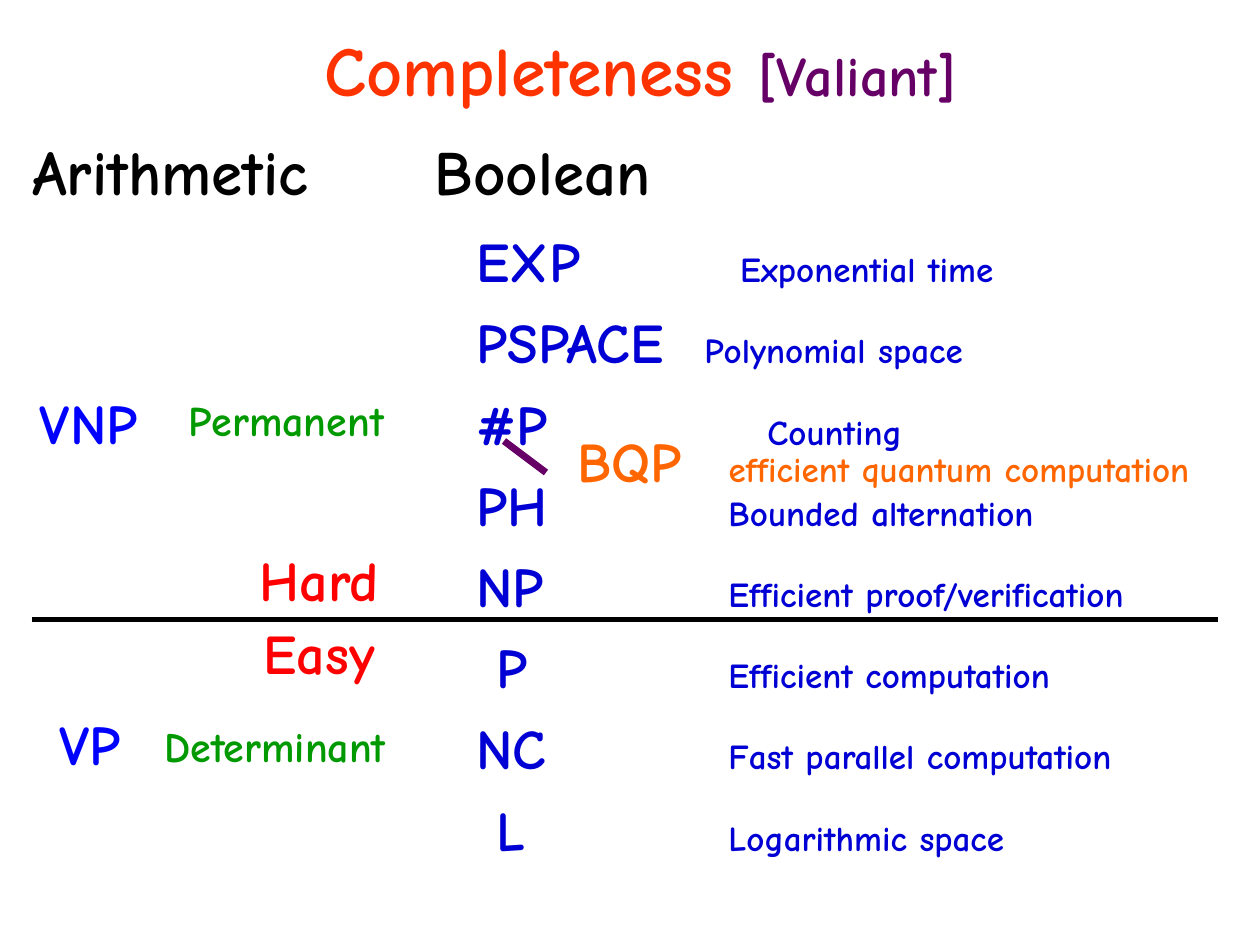
from dataclasses import dataclass

from lxml.etree import SubElement
from pptx import Presentation
from pptx.dml.color import RGBColor
from pptx.enum.shapes import MSO_CONNECTOR as Link
from pptx.enum.text import MSO_ANCHOR as Anchor, PP_ALIGN as Align
from pptx.oxml.ns import qn
from pptx.util import Inches, Pt

COLS, ROWS = 120, 90
PAD = 1.2
NAME, DESC = 45.4, 69.4
BLUE, NAVY, GREEN, RED = "0000FF", "0000D5", "009900", "FF0000"
ORANGE, PLUM, BLACK = "FF6600", "660066", "000000"

deck = Presentation()
deck.slide_width, deck.slide_height = Inches(10), Inches(7.5)
slide = deck.slides.add_slide(deck.slide_layouts[6])


@dataclass
class Label:
    """A centred word on the grid."""
    text: str
    left: float
    top: float
    width: float
    size: int
    color: str


@dataclass
class Level:
    """A complexity class, its meaning, and the column of each."""
    name: str
    note: str
    note_x: float = DESC
    name_x: float = NAME


@dataclass
class Rule:
    """A straight line between two grid points."""
    x1: float
    y1: float
    x2: float
    y2: float
    color: str
    weight: float


LABELS = [
    Label("Permanent", 16, 37, 22.5, 24, GREEN),
    Label("Determinant", 13, 68, 26.4, 24, GREEN),
    Label("Hard", 22.7, 51.4, 15.4, 32, RED),
    Label("Easy", 23.2, 58.3, 14.4, 32, RED),
    Label("Boolean", 39.6, 12, 24.2, 36, BLACK),
    Label("Arithmetic", -0.6, 12, 33.6, 36, BLACK),
    Label("VP", 4.1, 67, 8.9, 32, BLUE),
    Label("VNP", 1.8, 36.4, 13.3, 32, BLUE),
]
LEVELS = [
    Level("EXP", "Exponential time", 70.5),
    Level("PSPACE", "Polynomial space", 67.1),
    Level("#P", "Counting", 73.1),
    Level("PH", "Bounded alternation"),
    Level("NP", "Efficient proof/verification"),
    Level("P", "Efficient computation", name_x=47.3),
    Level("NC", "Fast parallel computation"),
    Level("L", "Logarithmic space", name_x=47.3),
]
QUANTUM = Level("BQP", "efficient quantum computation", name_x=55)
RULES = [
    Rule(3, 59, 116, 59, BLACK, 2.5),
    Rule(48, 42, 52, 45, PLUM, 4),
]


def across(cols: float) -> int:
    """Turn columns into a length."""
    return int(deck.slide_width * cols / COLS)


def down(rows: float) -> int:
    """Turn rows into a length."""
    return int(deck.slide_height * rows / ROWS)


def paint(code: str) -> RGBColor:
    """Turn a hex string into a colour."""
    return RGBColor.from_string(code)


def write(para, text: str, *, size: int, color: str) -> None:
    """Add one run of bold text."""
    run = para.add_run()
    run.text = text
    font = run.font
    font.name, font.size, font.bold = "Comic Neue", Pt(size), True
    font.color.rgb = paint(color)


def frame(left: float, top: float, width: float, height: float, wrap: bool = False):
    """Place a text box and return its frame."""
    box = slide.shapes.add_textbox(across(left), down(top), across(width), down(height))
    box.text_frame.word_wrap = wrap
    return box.text_frame


def draw_label(label: Label) -> None:
    """Draw a centred word."""
    para = frame(label.left, label.top, label.width, label.size * 0.24).paragraphs[0]
    para.alignment = Align.CENTER
    write(para, label.text, size=label.size, color=label.color)


def draw_levels(levels: list[Level], left: float, top: float, height: float, color: str) -> None:
    """List classes with their meanings at tab stops."""
    body = frame(left, top, COLS - left, height, wrap=True)
    for i, level in enumerate(levels):
        para = body.add_paragraph() if i else body.paragraphs[0]
        para.space_before = Pt(8 if i else 0)
        stops = SubElement(para._p.get_or_add_pPr(), qn("a:tabLst"))
        for x in (level.name_x, level.note_x):
            SubElement(stops, qn("a:tab"), pos=str(across(x - left - PAD)), algn="l")
        write(para, "\t" + level.name, size=32, color=color)
        write(para, "\t" + level.note, size=20, color=color)


def draw_rule(rule: Rule) -> None:
    """Draw a straight line."""
    line = slide.shapes.add_connector(
        Link.STRAIGHT, across(rule.x1), down(rule.y1), across(rule.x2), down(rule.y2))
    line.line.color.rgb = paint(rule.color)
    line.line.width = Pt(rule.weight)
    SubElement(line._element.spPr, qn("a:effectLst"))


def draw_title() -> None:
    """Draw the two-tone title."""
    title = frame(11, -1, 100, 15, wrap=True)
    title.vertical_anchor = Anchor.MIDDLE
    para = title.paragraphs[0]
    para.alignment = Align.CENTER
    write(para, "Completeness ", size=40, color="FF3300")
    write(para, "[Valiant]", size=32, color=PLUM)


def main() -> None:
    """Build and save the slide."""
    draw_title()
    draw_levels(LEVELS, 14, 21, 68, NAVY)
    draw_levels([QUANTUM], 46.7, 40, 7.7, ORANGE)
    for rule in RULES:
        draw_rule(rule)
    for label in LABELS:
        draw_label(label)
    deck.save("out.pptx")


if __name__ == "__main__":
    main()
